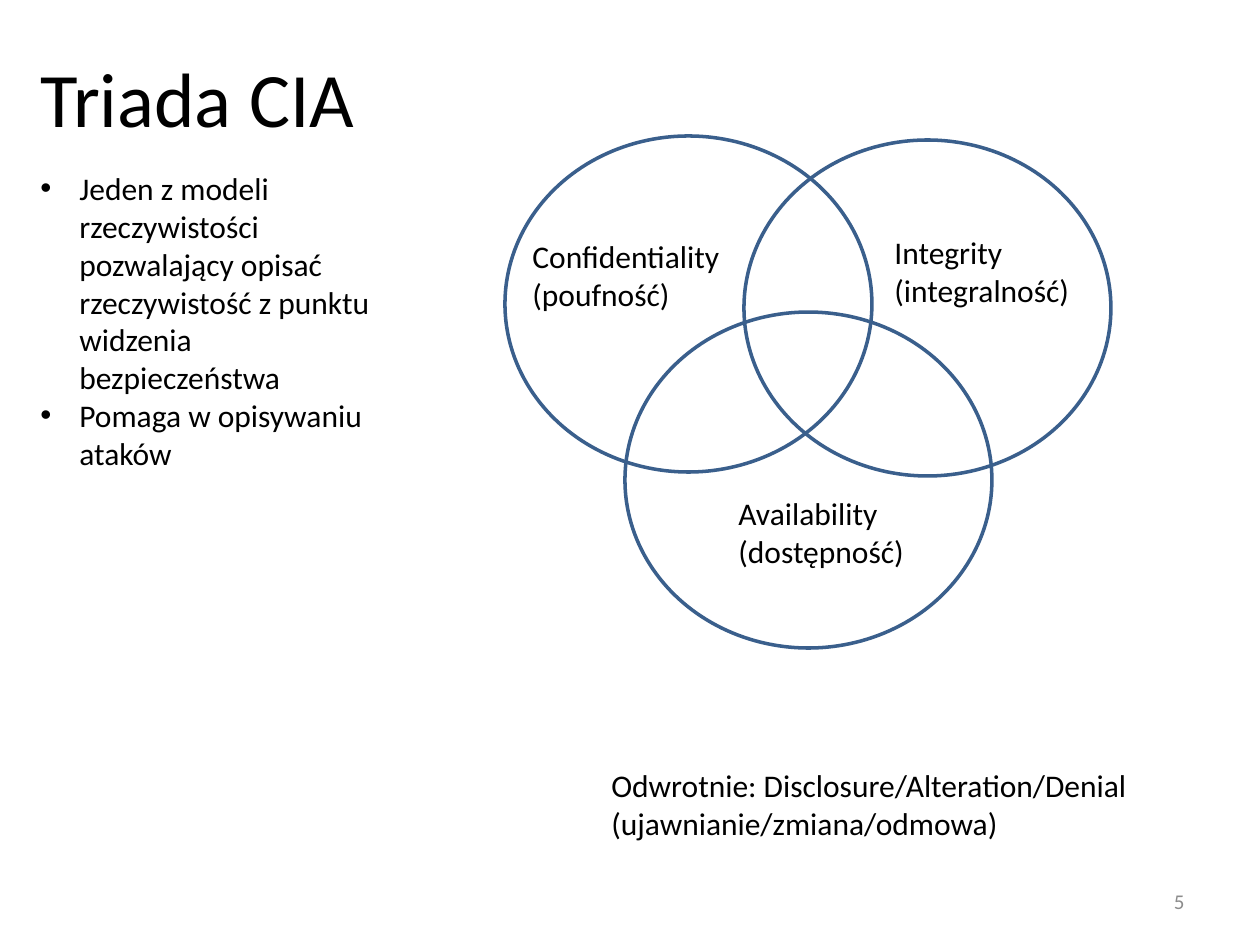
from dataclasses import dataclass

from lxml.etree import SubElement
from pptx import Presentation
from pptx.dml.color import RGBColor
from pptx.enum.shapes import MSO_SHAPE
from pptx.enum.text import MSO_ANCHOR, PP_ALIGN
from pptx.oxml.ns import qn
from pptx.util import Emu, Pt

PX_PER_INCH = 126


@dataclass(frozen=True)
class Theme:
    font: str = "Calibri"
    text: RGBColor = RGBColor(0x00, 0x00, 0x00)
    muted: RGBColor = RGBColor(0x8C, 0x8C, 0x8C)
    outline: RGBColor = RGBColor(0x3A, 0x5F, 0x8C)
    title_size: int = 44
    body_size: int = 18
    number_size: int = 12
    outline_width: int = 2


THEME = Theme()


def px(n):
    return Emu(round(n * 914400 / PX_PER_INCH))


def add_run(p, text, size, color):
    r = p.add_run()
    r.text = text
    r.font.name = THEME.font
    r.font.size = Pt(size)
    r.font.color.rgb = color


def add_text(s, box, lines, size=THEME.body_size, color=THEME.text,
             anchor=MSO_ANCHOR.TOP, align=PP_ALIGN.LEFT):
    """Add a text box with one paragraph, its lines parted by line breaks."""
    tf = s.shapes.add_textbox(*map(px, box)).text_frame
    tf.word_wrap = True
    tf.vertical_anchor = anchor
    p = tf.paragraphs[0]
    p.alignment = align
    for i, line in enumerate(lines):
        if i:
            p.add_line_break()
        add_run(p, line, size, color)


def add_title(s, box, text):
    add_text(s, box, [text], THEME.title_size, anchor=MSO_ANCHOR.MIDDLE)


def add_slide_number(s, box, number):
    add_text(s, box, [str(number)], THEME.number_size, THEME.muted,
             MSO_ANCHOR.MIDDLE, PP_ALIGN.RIGHT)


def add_bullets(s, box, items, indent=39):
    tf = s.shapes.add_textbox(*map(px, box)).text_frame
    tf.word_wrap = True
    for i, item in enumerate(items):
        p = tf.add_paragraph() if i else tf.paragraphs[0]
        p_pr = p._p.get_or_add_pPr()
        p_pr.set("marL", str(px(indent)))
        p_pr.set("indent", str(-px(indent)))
        SubElement(p_pr, qn("a:buFont"), typeface="Arial")
        SubElement(p_pr, qn("a:buChar"), char="•")
        add_run(p, item, THEME.body_size, THEME.text)


def add_venn(s, box, circles):
    """Draw overlapping ellipses in the box, then their labels on top."""
    left, top, width, height = box
    ellipse_w, ellipse_h = width - 239, height - 176
    label_w, label_h = 223, 89
    for (x, y), _, _ in circles:
        sp = s.shapes.add_shape(MSO_SHAPE.OVAL, px(left + x), px(top + y),
                                px(ellipse_w), px(ellipse_h))
        sp.shadow.inherit = False
        sp.fill.background()
        sp.line.color.rgb = THEME.outline
        sp.line.width = Pt(THEME.outline_width)
    for (x, y), (dx, dy), lines in circles:
        add_text(s, (left + x + dx, top + y + dy, label_w, label_h), lines)


def main():
    prs = Presentation()
    prs.slide_width, prs.slide_height = px(1260), px(945)
    s = prs.slides.add_slide(prs.slide_layouts[6])

    add_title(s, (28, 18, 1134, 158), "Triada CIA")
    add_slide_number(s, (903, 876, 294, 50), 5)
    # Each circle: its offset in the box, its label's offset, its label.
    add_venn(s, (505, 136, 606, 512), [
        ((0, 0), (15, 95), ["Confidentiality", "(poufność)"]),
        ((239, 4), (138, 87), ["Integrity", "(integralność)"]),
        ((120, 176), (101, 176), ["Availability", "(dostępność)"]),
    ])
    add_text(s, (599, 760, 543, 89),
             ["Odwrotnie: Disclosure/Alteration/Denial (ujawnianie/zmiana/odmowa)"])
    add_bullets(s, (28, 163, 359, 318), [
        "Jeden z modeli rzeczywistości pozwalający opisać rzeczywistość "
        "z punktu widzenia bezpieczeństwa",
        "Pomaga w opisywaniu ataków",
    ])
    prs.save("out.pptx")


if __name__ == "__main__":
    main()
